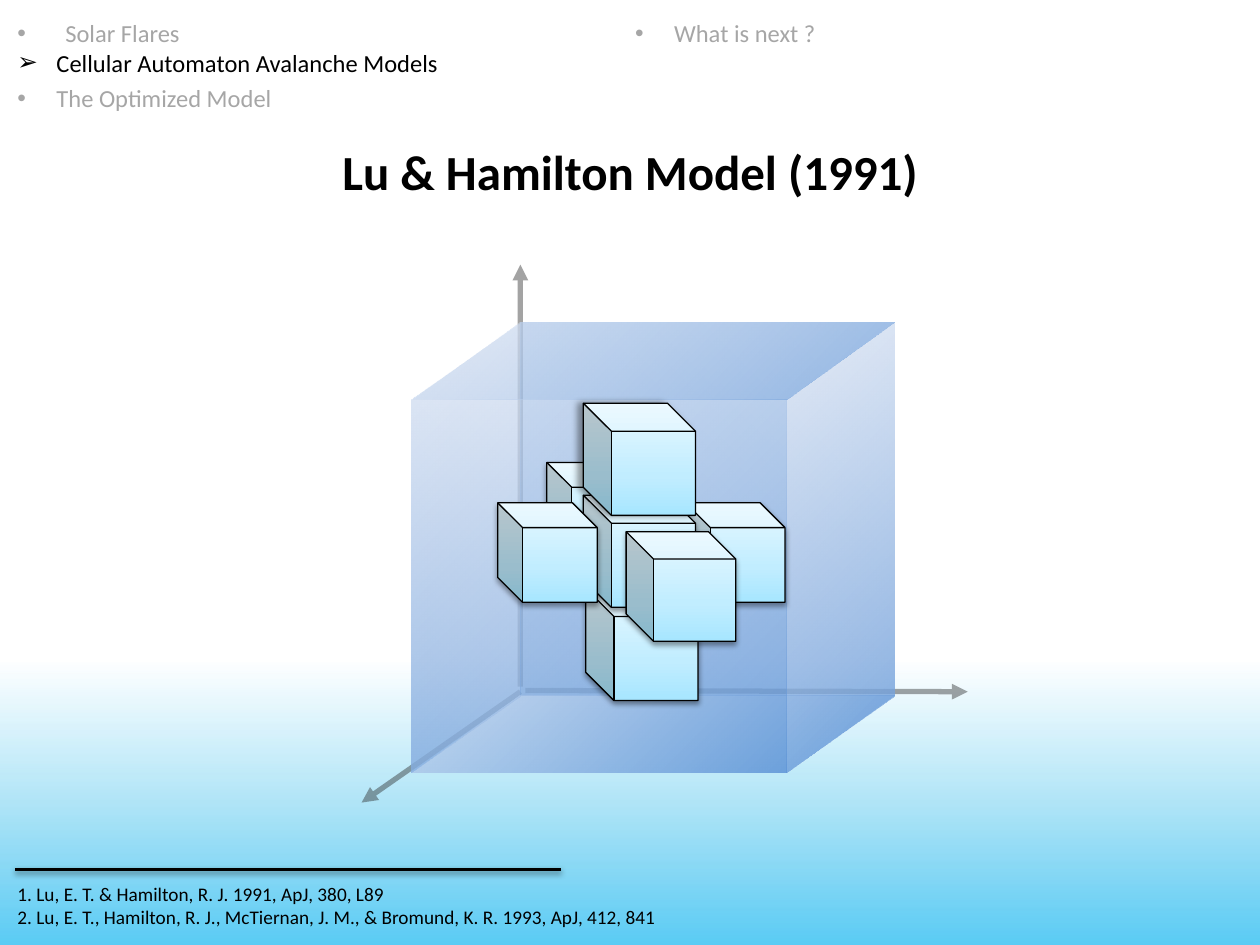
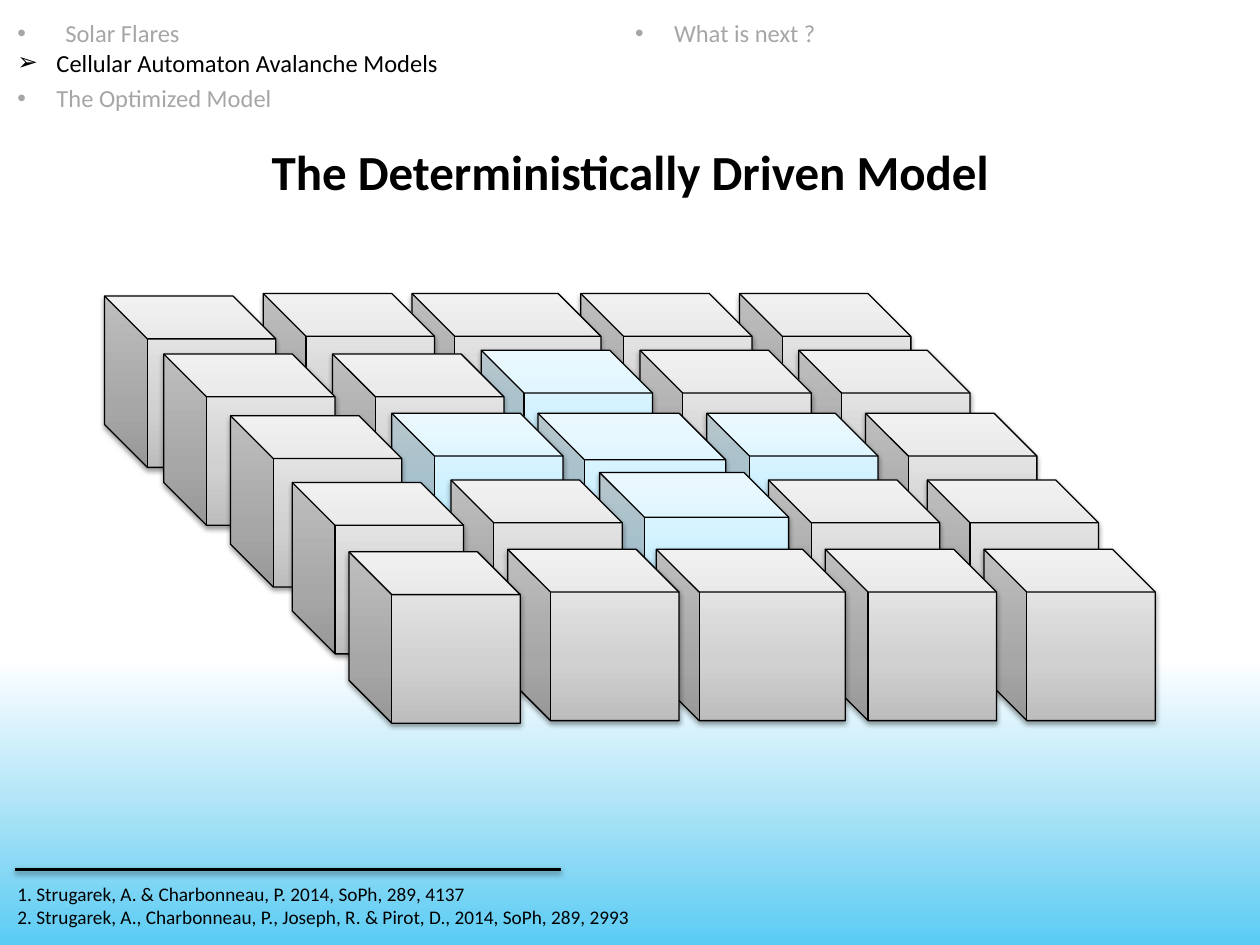
from dataclasses import dataclass

from pptx import Presentation
from pptx.dml.color import RGBColor
from pptx.enum.shapes import MSO_CONNECTOR, MSO_SHAPE
from pptx.enum.text import MSO_ANCHOR, MSO_AUTO_SIZE, PP_ALIGN
from pptx.oxml import parse_xml
from pptx.oxml.ns import nsdecls, qn
from pptx.util import Emu, Pt

SCALE = 9144
RECT, CUBE = MSO_SHAPE.RECTANGLE, MSO_SHAPE.CUBE
STRAIGHT = MSO_CONNECTOR.STRAIGHT
MIDDLE = MSO_ANCHOR.MIDDLE
NO_AUTOFIT = MSO_AUTO_SIZE.NONE
LEFT, CENTER = PP_ALIGN.LEFT, PP_ALIGN.CENTER


@dataclass(frozen=True)
class Theme:
    """Colours, gradients, shadows and type sizes shared by the slides."""
    font: str = "Calibri"
    ink: str = "000000"
    muted: str = "A6A6A6"
    axis: str = "262626"
    title: int = 28
    nav: int = 14
    note: int = 11
    band: tuple = ((0, "00B0F0", 65), (50, "00AAE6", 31), (100, "00B0F0", 0))
    glass: tuple = ((0, "558ED5", 60), (100, "E1E8F5", 50))
    blue: tuple = ((0, "A7E6FF", 100), (35, "C1EDFF", 100), (100, "E7F8FF", 100))
    gray: tuple = ((0, "BDBDBD", 100), (35, "D1D1D1", 100), (100, "EEEEEE", 100))
    soft: tuple = (38, 3.1, 1.6, 90)
    side: tuple = (40, 4, 3, 180)


T = Theme()

NAV = (
    ("Solar Flares", T.muted, "•", 38, 1.2),
    ("Cellular Automaton Avalanche Models", T.ink, "➢", 31, 1.0),
    ("The Optimized Model", T.muted, "•", 31, 1.2),
    ("What is next ?", T.muted, "•", 31, 1.2),
)


def px(n):
    """Turn px into EMU."""
    return Emu(n * SCALE)


def fill_gradient(sp, stops, angle):
    """Fill a shape with a linear gradient of (position, colour, opacity) stops."""
    sp.fill.background()
    gs = "".join(
        f'<a:gs pos="{pos * 1000}"><a:srgbClr val="{color}">'
        f'<a:alpha val="{alpha * 1000}"/></a:srgbClr></a:gs>'
        for pos, color, alpha in stops)
    spPr = sp.element.spPr
    spPr.replace(spPr.find(qn("a:noFill")), parse_xml(
        f'<a:gradFill {nsdecls("a")} rotWithShape="1"><a:gsLst>{gs}</a:gsLst>'
        f'<a:lin ang="{angle * 60000}" scaled="0"/></a:gradFill>'))


def set_shadow(sp, shadow=None):
    """Give a shape or connector an outer shadow, or none at all."""
    outer = ""
    if shadow:
        alpha, blur, dist, angle = shadow
        outer = (f'<a:outerShdw blurRad="{Pt(blur)}" dist="{Pt(dist)}" '
                 f'dir="{angle * 60000}" rotWithShape="0"><a:srgbClr val="{T.ink}">'
                 f'<a:alpha val="{alpha * 1000}"/></a:srgbClr></a:outerShdw>')
    sp.element.spPr.append(
        parse_xml(f'<a:effectLst {nsdecls("a")}>{outer}</a:effectLst>'))


def add_pane(shapes, box, stops, angle):
    """Add an unlined gradient rectangle."""
    sp = shapes.add_shape(RECT, *map(px, box))
    fill_gradient(sp, stops, angle)
    sp.line.fill.background()
    set_shadow(sp)


def add_polygon(shapes, points, stops, angle):
    """Add an unlined gradient polygon through the points."""
    builder = shapes.build_freeform(*points[0], scale=float(SCALE))
    builder.add_line_segments(points[1:], close=True)
    sp = builder.convert_to_shape()
    fill_gradient(sp, stops, angle)
    sp.line.fill.background()
    set_shadow(sp)


def add_cube(s, x, y, w, h, stops, shadow=T.soft):
    """Add an outlined cube that shows its left side."""
    sp = s.shapes.add_shape(CUBE, px(x), px(y), px(w), px(h))
    sp.element.spPr.find(qn("a:xfrm")).set("flipH", "1")
    fill_gradient(sp, stops, 270)
    sp.line.color.rgb = RGBColor.from_string(T.ink)
    sp.line.width = Pt(0.75)
    set_shadow(sp, shadow)


def add_line(shapes, start, end, color, width, shadow=None, alpha=100, arrow=False):
    """Add a straight line, with an arrowhead at its end if asked."""
    cxn = shapes.add_connector(STRAIGHT, *map(px, start + end))
    cxn.line.color.rgb = RGBColor.from_string(color)
    cxn.line.width = Pt(width)
    ln = cxn.element.spPr.find(qn("a:ln"))
    if alpha < 100:
        ln.find(".//" + qn("a:srgbClr")).append(
            parse_xml(f'<a:alpha {nsdecls("a")} val="{alpha * 1000}"/>'))
    if arrow:
        ln.append(parse_xml(f'<a:tailEnd {nsdecls("a")} type="triangle"/>'))
    set_shadow(cxn, shadow)


def write(p, text, size, color=T.ink, bold=False, align=LEFT, spacing=1.0,
          bullet=None, indent=0):
    """Write one formatted paragraph."""
    p.alignment = align
    p.line_spacing = spacing
    r = p.add_run()
    r.text = text
    r.font.name = T.font
    r.font.size = Pt(size)
    r.font.bold = bold
    r.font.color.rgb = RGBColor.from_string(color)
    if bullet:
        pPr = p._p.get_or_add_pPr()
        pPr.set("marL", str(px(indent)))
        pPr.set("indent", str(px(-indent)))
        pPr.append(parse_xml(f'<a:buFont {nsdecls("a")} typeface="Arial"/>'))
        pPr.append(parse_xml(f'<a:buChar {nsdecls("a")} char="{bullet}"/>'))


def prepare_frame(sp):
    """Set wrapping and middle anchoring and return the text frame."""
    tf = sp.text_frame
    tf.word_wrap = True
    tf.auto_size = NO_AUTOFIT
    tf.vertical_anchor = MIDDLE
    return tf


def add_text(s, box, lines):
    """Add a text box of (text, format) paragraphs."""
    tf = prepare_frame(s.shapes.add_textbox(*map(px, box)))
    for i, (text, fmt) in enumerate(lines):
        p = tf.add_paragraph() if i else tf.paragraphs[0]
        write(p, text, **fmt)
    return tf


def add_nav(s):
    """Add the two-column outline with the current section marked."""
    tf = add_text(s, (4, -1, 1000, 101), [
        (text, dict(size=T.nav, color=color, bullet=bullet, indent=indent,
                    spacing=spacing))
        for text, color, bullet, indent, spacing in NAV])
    bodyPr = tf._txBody.find(qn("a:bodyPr"))
    bodyPr.set("numCol", "2")
    bodyPr.set("spcCol", "0")


def add_base(prs, title, references):
    """Add a slide with band, outline, title and references."""
    s = prs.slides.add_slide(prs.slide_layouts[5])
    sp = s.shapes.title
    sp.left, sp.top, sp.width, sp.height = map(px, (0, 101, 1000, 69))
    write(prepare_frame(sp).paragraphs[0], title, T.title, bold=True, align=CENTER)
    add_pane(s.shapes, (-2, 525, 1003, 226), T.band, 270)
    add_text(s, (4, 684, 1000, 69),
             [(f"{n}. {ref}", dict(size=T.note)) for n, ref in enumerate(references, 1)])
    add_line(s.shapes, (12, 690), (445, 690), T.ink, 2, T.soft)
    add_nav(s)
    return s


def add_axes(s):
    """Add the three grouped axis arrows."""
    shapes = s.shapes.add_group_shape().shapes
    for start, end in (((413, 545), (413, 210)),
                       ((413, 549), (287, 637)),
                       ((417, 548), (768, 549))):
        add_line(shapes, start, end, T.axis, 3, alpha=41, arrow=True)


def add_glass_box(s, x, y, w, h, dx, dy):
    """Add a see-through box from its front face and its depth offset."""
    shapes = s.shapes.add_group_shape().shapes

    def receding(start, end):
        """Return the face that runs back from a front edge."""
        (x1, y1), (x2, y2) = start, end
        return [start, (x1 + dx, y1 + dy), (x2 + dx, y2 + dy), end]

    top_left, top_right = (x, y), (x + w, y)
    low_left, low_right = (x, y + h), (x + w, y + h)
    add_polygon(shapes, receding(top_left, low_left), T.glass, 315)
    add_pane(shapes, (x + dx, y + dy, w, h), T.glass, 315)
    add_polygon(shapes, receding(low_left, low_right), T.glass, 225)
    add_polygon(shapes, receding(top_right, low_right), T.glass, 225)
    add_pane(shapes, (x, y, w, h), T.glass, 225)
    add_polygon(shapes, receding(top_left, top_right), T.glass, 225)


def add_neighbours(s):
    """Add the central cell and its six neighbours, back to front."""
    for x, y, size, shadow in ((465, 467, 89, T.soft), (544, 399, 79, T.soft),
                               (434, 367, 79, T.soft), (463, 393, 89, T.soft),
                               (463, 320, 89, T.side), (395, 399, 79, T.soft),
                               (497, 422, 87, T.soft)):
        add_cube(s, x, y, size, size, T.blue, shadow)


def add_lattice(s):
    """Add the 5 by 5 lattice with a blue cross of active cells."""
    size, pitch = 136, 126
    rows = ((83, 233), (130, 278), (183, 328), (232, 381), (277, 436))
    active = {(1, 2), (2, 1), (2, 2), (2, 3), (3, 2)}
    special = {(1, 1): (264, 281, size, size), (2, 1): (311, 328, size, size),
               (1, 2): (382, 278, size, size), (2, 2): (427, 328, 149, 148),
               (3, 2): (476, 375, 150, 142), (1, 0): (130, 281, size, size)}
    for row, (left, top) in enumerate(rows):
        for col in reversed(range(5)):
            x, y, w = left + pitch * col, top, size
            if col == 2:
                x, w = x - 8, 150
            elif col == 0:
                y += 2
            box = special.get((row, col), (x, y, w, size))
            add_cube(s, *box, T.blue if (row, col) in active else T.gray)


def main():
    """Build and save the two slides."""
    prs = Presentation()
    prs.slide_width, prs.slide_height = px(1000), px(750)

    s = add_base(prs, "Lu & Hamilton Model (1991)", (
        "Lu, E. T. & Hamilton, R. J. 1991, ApJ, 380, L89",
        "Lu, E. T., Hamilton, R. J., McTiernan, J. M., & Bromund, K. R. 1993, ApJ, 412, 841"))
    add_axes(s)
    add_glass_box(s, 327, 317, 297, 296, 86, -61)
    add_neighbours(s)

    s = add_base(prs, "The Deterministically Driven Model", (
        "Strugarek, A. & Charbonneau, P. 2014, SoPh, 289, 4137",
        "Strugarek, A., Charbonneau, P., Joseph, R. & Pirot, D., 2014, SoPh, 289, 2993"))
    add_lattice(s)

    prs.save("out.pptx")


if __name__ == "__main__":
    main()
